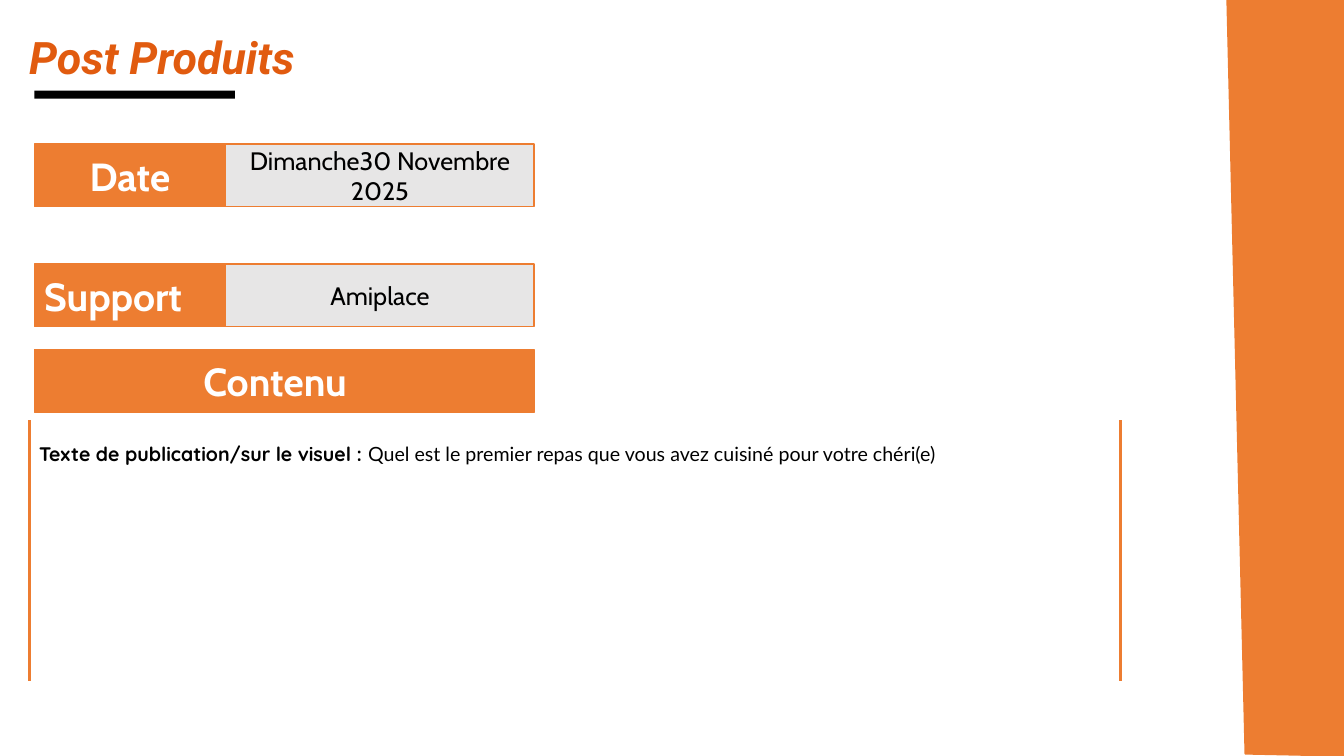
from dataclasses import dataclass

from lxml import etree
from pptx import Presentation, util as u
from pptx.dml.color import RGBColor
from pptx.enum import shapes, text
from pptx.oxml import ns


@dataclass(frozen=True)
class Theme:
    orange: str = "ED7D31"
    rust: str = "E15B0F"
    gray: str = "E7E6E6"
    black: str = "000000"
    white: str = "FFFFFF"
    title: int = 32
    label: int = 28
    value: int = 18
    body: int = 14
    edge: float = 1
    rule: float = 2.25


@dataclass(frozen=True)
class Font:
    name: str
    size: int
    color: str
    bold: bool = False
    slant: bool = False


@dataclass(frozen=True)
class Box:
    left: float
    top: float
    width: float
    words: str
    fill: str
    font: Font
    align: text.PP_ALIGN = text.PP_ALIGN.CENTER
    inset: float = 0.75


THEME = Theme()
WIDE, HIGH = u.Inches(13.33), u.Inches(7.5)
LEFT, SPLIT, FULL = 2.55, 14.25, 37.2
DATE, MEDIA, TOPIC, TALL = 19.07, 34.93, 46.27, 8.27
SIDES, UPPER, LOWER = (2.18, 83.35), 55.6, 90.13
BAND = ((91.3, 0), (100, 0), (100, 100), (92.65, 99.73))

LABEL = Font("Cabin", THEME.label, THEME.white, True)
VALUE = Font("Cabin", THEME.value, THEME.black)
TITLE = Font("Roboto", THEME.title, THEME.rust, True, True)
LEAD = Font("Quicksand", THEME.body, THEME.black, True)
BODY = Font("Lato", THEME.body, THEME.black)

BOXES = (
    Box(LEFT, DATE, SPLIT, "Date", THEME.orange, LABEL),
    Box(LEFT + SPLIT, DATE, FULL - SPLIT, "Dimanche30 Novembre 2025", THEME.gray, VALUE),
    Box(LEFT, MEDIA, SPLIT, "Support", THEME.orange, LABEL, text.PP_ALIGN.LEFT),
    Box(LEFT + SPLIT, MEDIA, FULL - SPLIT, "Amiplace", THEME.gray, VALUE),
    Box(LEFT, TOPIC, FULL, "Contenu", THEME.orange, LABEL, inset=2.1),
)


def col(count: float) -> int:
    return round(WIDE * count / 100)


def row(count: float) -> int:
    return round(HIGH * count / 100)


def tint(shape, fill: str, line: str | None = None) -> None:
    shape.shadow.inherit = False
    shape.fill.solid()
    shape.fill.fore_color.rgb = RGBColor.from_string(fill)
    if line is None:
        shape.line.fill.background()
    else:
        shape.line.color.rgb = RGBColor.from_string(line)
        shape.line.width = u.Pt(THEME.edge)


def style(run, font: Font) -> None:
    run.font.name = font.name
    run.font.size = u.Pt(font.size)
    run.font.bold = font.bold
    run.font.italic = font.slant
    run.font.color.rgb = RGBColor.from_string(font.color)


def draw_band(slide) -> None:
    start, *rest = [(col(x), row(y)) for x, y in BAND]
    path = slide.shapes.build_freeform(*start)
    path.add_line_segments(rest, close=True)
    tint(path.convert_to_shape(), THEME.orange, THEME.orange)


def draw_rect(slide, left: float, top: float, width: float, height: float):
    return slide.shapes.add_shape(
        shapes.MSO_SHAPE.RECTANGLE, col(left), row(top), col(width), row(height)
    )


def draw_box(slide, box: Box) -> None:
    shape = draw_rect(slide, box.left, box.top, box.width, TALL)
    tint(shape, box.fill, THEME.orange)
    frame = shape.text_frame
    frame.word_wrap = True
    frame.vertical_anchor = text.MSO_ANCHOR.MIDDLE
    frame.margin_right = col(box.inset)
    frame.text = box.words
    line = frame.paragraphs[0]
    line.alignment = box.align
    style(line.runs[0], box.font)


def draw_side(slide, left: float) -> None:
    line = slide.shapes.add_connector(
        shapes.MSO_CONNECTOR.STRAIGHT, col(left), row(UPPER), col(left), row(LOWER)
    )
    line.line.color.rgb = RGBColor.from_string(THEME.orange)
    line.line.width = u.Pt(THEME.rule)
    etree.SubElement(line._element.spPr, ns.qn("a:effectLst"))


def draw_text(slide, left: float, top: float, width: float, height: float,
              parts: tuple[tuple[str, Font], ...], align: text.PP_ALIGN):
    shape = slide.shapes.add_textbox(col(left), row(top), col(width), row(height))
    frame = shape.text_frame
    frame.word_wrap = True
    line = frame.paragraphs[0]
    line.alignment = align
    for words, font in parts:
        run = line.add_run()
        run.text = words
        style(run, font)
    return frame


def main() -> None:
    deck = Presentation()
    deck.slide_width, deck.slide_height = WIDE, HIGH
    slide = deck.slides.add_slide(deck.slide_layouts[6])
    draw_band(slide)
    tint(draw_rect(slide, LEFT, 12, 14.93, 1.07), THEME.black)
    for box in BOXES:
        draw_box(slide, box)
    for left in SIDES:
        draw_side(slide, left)
    post = (
        ("Texte de publication/sur le visuel : ", LEAD),
        ("Quel est le premier repas que vous avez cuisiné pour votre chéri(e)", BODY),
    )
    frame = draw_text(slide, SIDES[0], 57.73, SIDES[1] - SIDES[0], 4.53,
                      post, text.PP_ALIGN.LEFT)
    frame.auto_size = text.MSO_AUTO_SIZE.SHAPE_TO_FIT_TEXT
    draw_text(slide, 1.43, 3.33, 82.75, 6.93,
              (("Post Produits", TITLE),), text.PP_ALIGN.JUSTIFY)
    deck.save("out.pptx")


if __name__ == "__main__":
    main()
